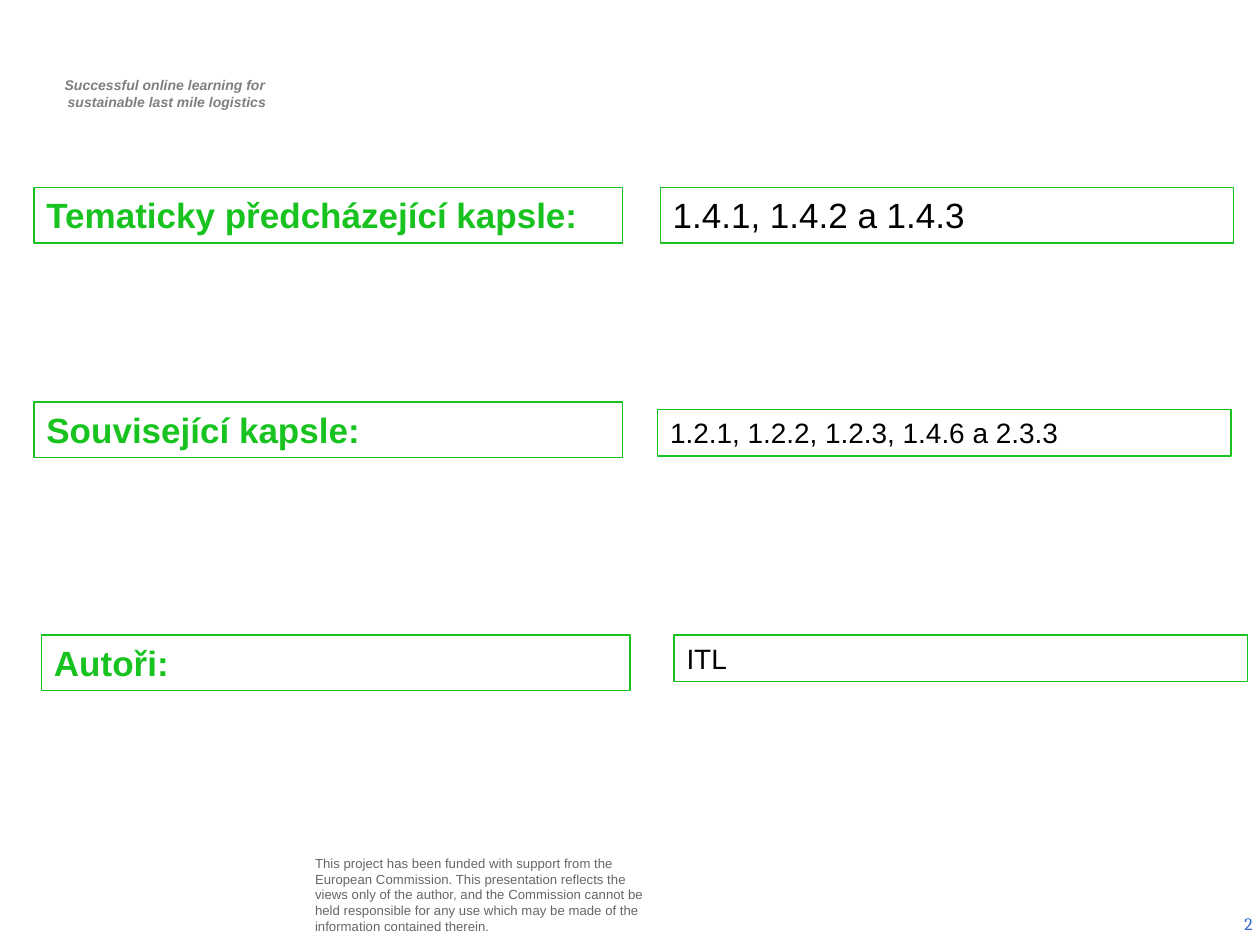
from pptx import Presentation
from pptx.dml.color import RGBColor
from pptx.enum.shapes import MSO_SHAPE
from pptx.enum.text import MSO_ANCHOR, PP_ALIGN
from pptx.util import Inches, Pt

GREEN = RGBColor(0x18, 0xC3, 0x20)
BLACK = RGBColor(0, 0, 0)
WHITE = RGBColor(0xFF, 0xFF, 0xFF)
HEADER_GRAY = RGBColor(0x7F, 0x7F, 0x7F)
FOOTER_GRAY = RGBColor(0x66, 0x66, 0x66)
BLUE = RGBColor(0x33, 0x66, 0xCC)

LABEL_WIDTH, VALUE_WIDTH = 4.67, 4.55

# Label and its (left, top); value, its (left, top), height and text size
CAPSULE_ROWS = [
    ("Tematicky předcházející kapsle:", (0.27, 1.49),
     "1.4.1, 1.4.2 a 1.4.3", (5.24, 1.49), 0.44, 20),
    ("Související kapsle:", (0.27, 3.19),
     "1.2.1, 1.2.2, 1.2.3, 1.4.6 a 2.3.3", (5.22, 3.25), 0.37, 16),
    ("Autoři:", (0.33, 5.04), "ITL", (5.35, 5.04), 0.37, 16),
]


def write_text(shape, *lines, size, color, font="Arial", bold=False, italic=False,
               align=PP_ALIGN.LEFT, anchor=MSO_ANCHOR.TOP, insets=(0.1, 0.05, 0.1, 0.05)):
    """Fill a shape with one paragraph per line."""
    frame = shape.text_frame
    frame.word_wrap = True
    frame.vertical_anchor = anchor
    (frame.margin_left, frame.margin_top,
     frame.margin_right, frame.margin_bottom) = map(Inches, insets)
    for index, line in enumerate(lines):
        para = frame.add_paragraph() if index else frame.paragraphs[0]
        para.alignment = align
        span = para.add_run()
        span.text = line
        span.font.name = font
        span.font.size = Pt(size)
        span.font.bold = bold
        span.font.italic = italic
        span.font.color.rgb = color


def add_text(page, box, *lines, **style):
    write_text(page.shapes.add_textbox(*map(Inches, box)), *lines, **style)


def add_framed_text(page, box, text, **style):
    frame_box = page.shapes.add_shape(MSO_SHAPE.RECTANGLE, *map(Inches, box))
    frame_box.shadow.inherit = False
    frame_box.fill.solid()
    frame_box.fill.fore_color.rgb = WHITE
    frame_box.line.color.rgb = GREEN
    frame_box.line.width = Pt(0.75)
    write_text(frame_box, text, **style)


def add_header(page, box):
    add_text(page, box, "Successful online learning for ",
             "sustainable last mile logistics", size=8, color=HEADER_GRAY,
             bold=True, italic=True, align=PP_ALIGN.CENTER,
             insets=(0.14, 0.05, 0.1, 0.05))


def add_capsule_row(page, label, label_at, value, value_at, value_height, value_size):
    add_framed_text(page, (*label_at, LABEL_WIDTH, 0.44), label,
                    size=20, color=GREEN, bold=True)
    add_framed_text(page, (*value_at, VALUE_WIDTH, value_height), value,
                    size=value_size, color=BLACK)


def add_disclaimer(page, box):
    add_text(page, box,
             "This project has been funded with support from the European Commission. "
             "This presentation reflects the views only of the author, and the "
             "Commission cannot be held responsible for any use which may be made of "
             "the information contained therein.",
             size=7.5, color=FOOTER_GRAY, anchor=MSO_ANCHOR.MIDDLE, insets=(0.04,) * 4)


def add_page_number(page, box):
    add_text(page, box, "2", size=10, color=BLUE, font="Cambria",
             align=PP_ALIGN.RIGHT, anchor=MSO_ANCHOR.MIDDLE)


def main():
    deck = Presentation()
    deck.slide_width, deck.slide_height = Inches(10), Inches(7.5)
    page = deck.slides.add_slide(deck.slide_layouts[6])

    # Header and footer
    add_header(page, (0.29, 0.56, 2.03, 0.37))
    add_disclaimer(page, (2.46, 6.85, 2.81, 0.5))
    add_page_number(page, (7.71, 7.13, 2.33, 0.4))

    # Capsule details
    for row in CAPSULE_ROWS:
        add_capsule_row(page, *row)

    deck.save("out.pptx")


if __name__ == "__main__":
    main()
